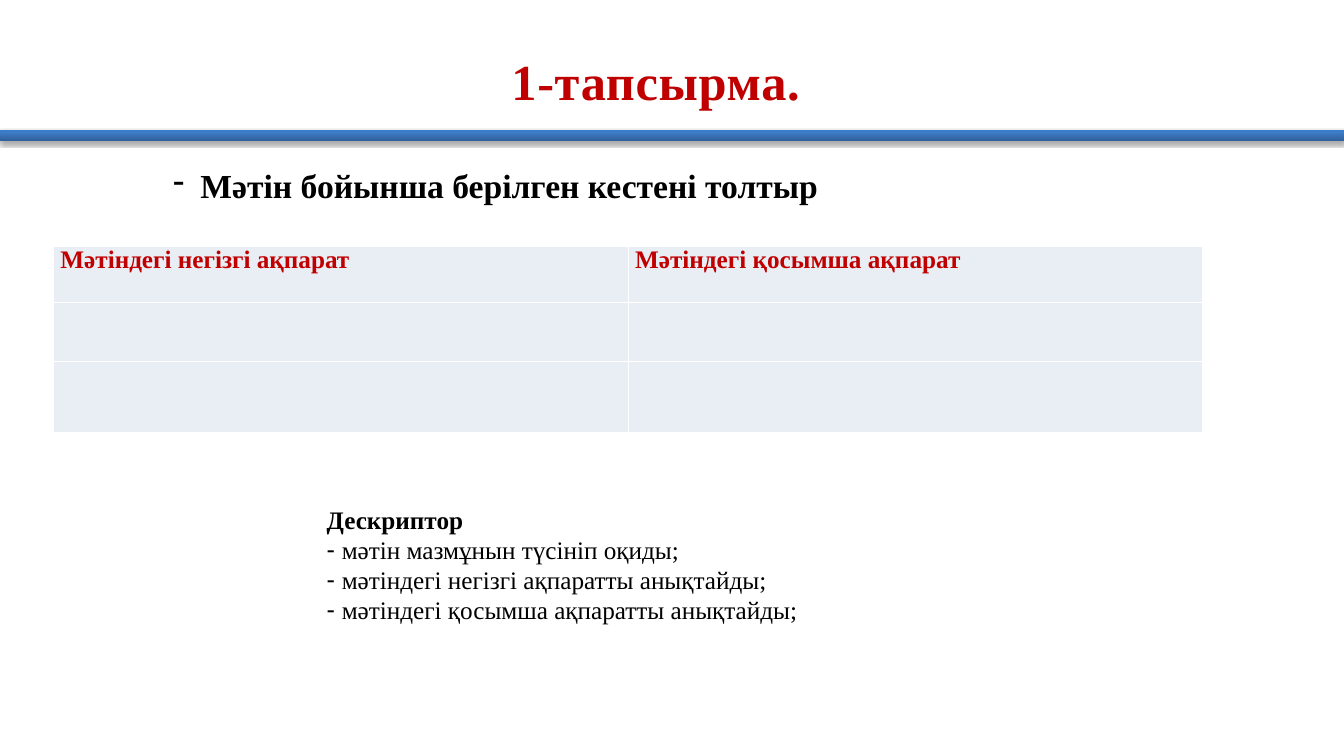
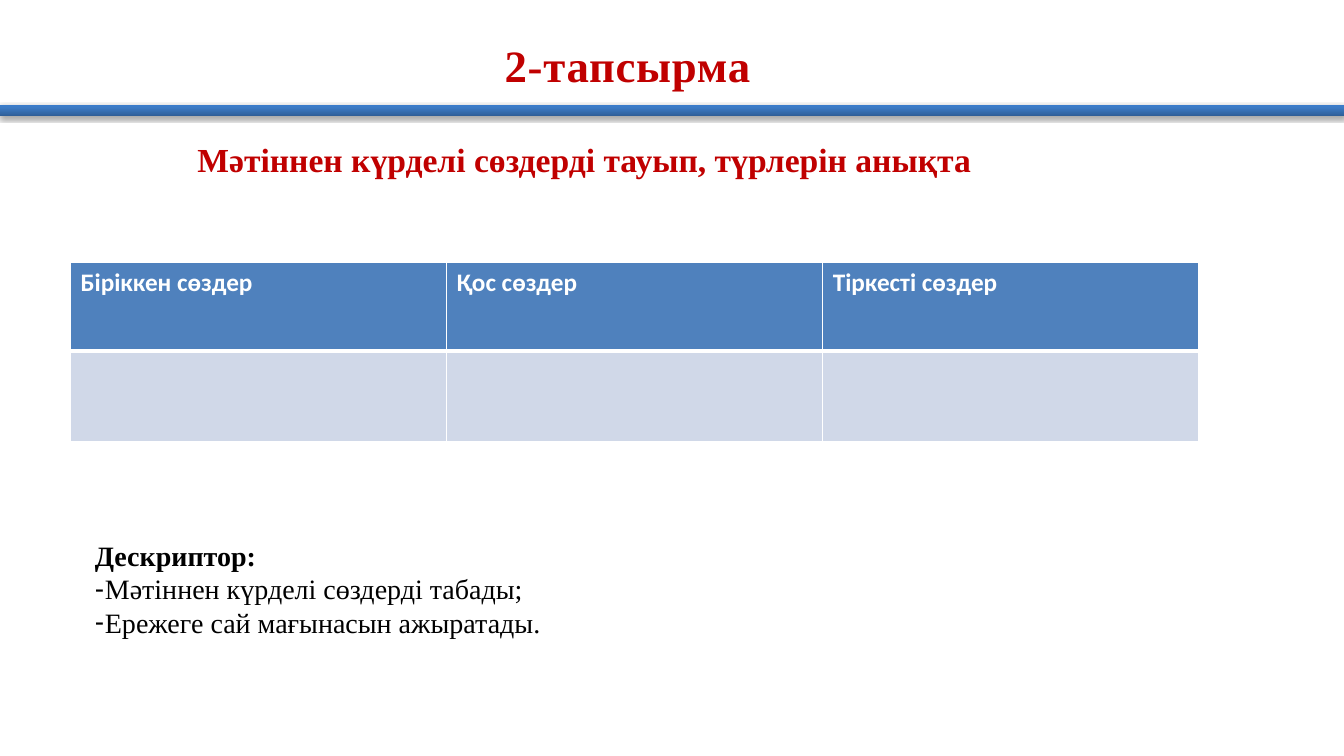
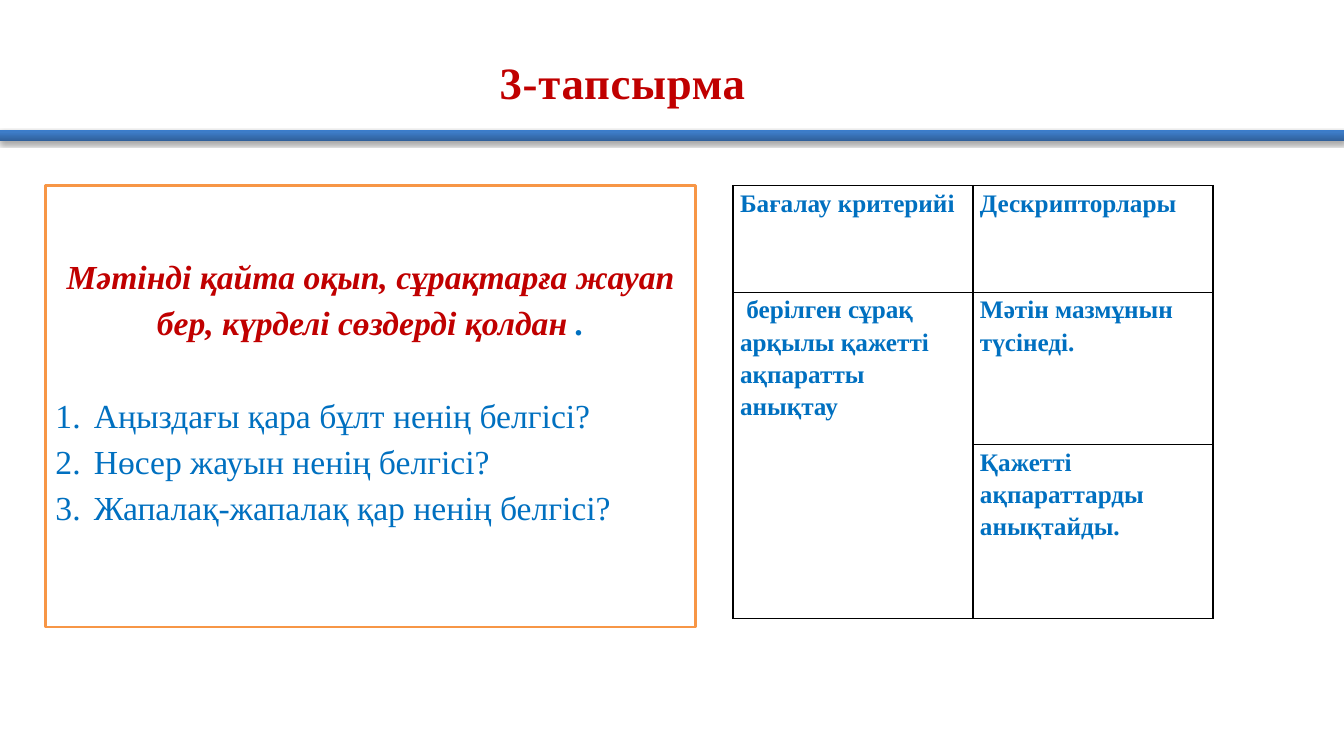
"""Build three lesson task slides with a shared title and band style."""
from lxml import etree
from pptx import Presentation
from pptx.dml.color import RGBColor
from pptx.enum.shapes import MSO_SHAPE as Shape
from pptx.enum.text import MSO_ANCHOR as Anchor, MSO_AUTO_SIZE as AutoSize, PP_ALIGN as Align
from pptx.oxml import parse_xml
from pptx.oxml.ns import nsdecls, qn
from pptx.util import Emu, Pt

PX = 9144
SLIDE_W, SLIDE_H = 1333, 750
SERIF, SANS = "Times New Roman", "Calibri"
RED, BLUE, BLACK, WHITE, ORANGE = "C00000", "0070C0", "000000", "FFFFFF", "F79646"
BAND_STOPS = [(0, "2F5F99"), (80, "3D7CC7"), (100, "3A7CCB")]
BAND_H = 11

TASKS = [
    {
        "title": ("1-тапсырма.", (484, 44, 333, 71), 36),
        "band_top": 129,
        "prompt": {
            "box": (162, 156, 797, 50), "size": 24, "spacing": 1.07,
            "lines": [{"runs": [("Мәтін бойынша берілген кестені толтыр", {"bold": True})],
                       "mark": "-", "indent": 27}],
        },
        "body": {
            "box": (314, 495, 667, 162), "size": 18,
            "lines": [
                {"runs": [("Дескриптор", {"bold": True})]},
                {"runs": [("мәтін мазмұнын түсініп оқиды;", {})], "mark": "-", "indent": 15},
                {"runs": [("мәтіндегі негізгі ақпаратты анықтайды;", {})], "mark": "-", "indent": 15},
                {"runs": [("мәтіндегі қосымша ақпаратты анықтайды;", {})], "mark": "-", "indent": 15},
            ],
        },
        "table": {
            "at": (53, 244), "col_width": 570, "row_heights": [56, 59, 70],
            "rows": [["Мәтіндегі негізгі ақпарат", "Мәтіндегі қосымша ақпарат"], ["", ""], ["", ""]],
            "fills": ["E9EDF4"] * 3, "border": WHITE, "header_rule": 1,
            "insets": (7, 0), "font": SERIF, "color": RED, "spacing": 1,
        },
    },
    {
        "title": ("2-тапсырма", (483, 32, 279, 64), 32),
        "band_top": 104,
        "prompt": {
            "box": (186, 133, 850, 50), "size": 24, "color": RED,
            "lines": [{"runs": [("Мәтіннен күрделі сөздерді тауып, түрлерін анықта", {"bold": True})]}],
        },
        "body": {
            "box": (84, 529, 813, 111), "size": 20,
            "lines": [
                {"runs": [("Дескриптор:", {"bold": True})]},
                {"runs": [("Мәтіннен күрделі сөздерді табады;", {})], "mark": "-", "indent": 10},
                {"runs": [("Ережеге сай мағынасын ажыратады.", {})], "mark": "-", "indent": 10},
            ],
        },
        "table": {
            "at": (70, 260), "col_width": 373, "row_heights": [88, 90],
            "rows": [["Біріккен сөздер", "Қос сөздер", "Тіркесті сөздер"], ["", "", ""]],
            "fills": ["4F81BD", "D0D8E8"], "border": WHITE, "header_rule": 3,
            "insets": (10, 5), "font": SANS, "color": WHITE, "spacing": 1,
        },
    },
    {
        "title": ("3-тапсырма", (472, 49, 291, 64), 32),
        "band_top": 129,
        "body": {
            "box": (45, 184, 645, 438), "size": 24, "color": BLUE, "spacing": 1.15,
            "frame": ORANGE, "bottom_inset": 40,
            "lines": [
                {"runs": [("Мәтінді қайта оқып, сұрақтарға жауап бер, күрделі сөздерді қолдан ",
                           {"bold": True, "italic": True, "color": RED}),
                          (".", {"bold": True, "italic": True})], "align": Align.CENTER},
                {"runs": [("Аңыздағы қара бұлт ненің белгісі?", {})],
                 "mark": "1.", "indent": 38, "before": 33},
                {"runs": [("Нөсер жауын ненің белгісі?", {})], "mark": "1.", "indent": 38},
                {"runs": [("Жапалақ-жапалақ қар ненің белгісі?", {})], "mark": "1.", "indent": 38},
            ],
        },
        "table": {
            "at": (727, 184), "col_width": 238, "row_heights": [106, 151, 173],
            "rows": [["Бағалау критерийі", "Дескрипторлары"],
                     [" берілген сұрақ арқылы қажетті ақпаратты анықтау", "Мәтін мазмұнын түсінеді."],
                     ["", "Қажетті ақпараттарды анықтайды."]],
            "fills": [None] * 3, "border": BLACK, "header_rule": 1, "merge": ((1, 0), (2, 0)),
            "insets": (7, 0), "font": SERIF, "color": BLUE, "spacing": 1.15,
        },
    },
]


def px(*lengths):
    return [Emu(length * PX) for length in lengths]


def rgb(value):
    return RGBColor.from_string(value)


def place(shape, box):
    shape.left, shape.top, shape.width, shape.height = px(*box)


def add_run(paragraph, text, size, color, font=SERIF, bold=False, italic=False):
    run = paragraph.add_run()
    run.text = text
    run.font.name, run.font.size = font, Pt(size)
    run.font.bold, run.font.italic = bold, italic
    run.font.color.rgb = rgb(color)
    return run


def set_mark(paragraph, mark, indent):
    props = paragraph._p.get_or_add_pPr()
    props.set("marL", str(indent * PX))
    props.set("indent", str(-indent * PX))
    if mark == "1.":
        etree.SubElement(props, qn("a:buAutoNum"), type="arabicPeriod")
    elif mark:
        etree.SubElement(props, qn("a:buChar"), char=mark)
    else:
        etree.SubElement(props, qn("a:buNone"))


def write_lines(shape, part):
    frame = shape.text_frame
    frame.word_wrap, frame.auto_size = True, AutoSize.NONE
    for index, line in enumerate(part["lines"]):
        paragraph = frame.add_paragraph() if index else frame.paragraphs[0]
        set_mark(paragraph, line.get("mark"), line.get("indent", 0))
        paragraph.alignment = line.get("align", Align.LEFT)
        paragraph.line_spacing = part.get("spacing", 1.0)
        paragraph.space_before = Pt(line.get("before", 0))
        for text, style in line["runs"]:
            add_run(paragraph, text, part["size"], **{"color": part.get("color", BLACK), **style})


def add_title(slide, text, box, size):
    title = slide.shapes.title
    place(title, box)
    title.text_frame.auto_size = AutoSize.NONE
    paragraph = title.text_frame.paragraphs[0]
    paragraph.alignment = Align.CENTER
    run = add_run(paragraph, text, size, RED, bold=True)
    run._r.get_or_add_rPr().set("spc", "50")


def add_band(slide, top):
    band = slide.shapes.add_shape(Shape.RECTANGLE, *px(0, top, SLIDE_W, BAND_H))
    stops = "".join(f'<a:gs pos="{pos * 1000}"><a:srgbClr val="{color}"/></a:gs>'
                    for pos, color in BAND_STOPS)
    ns = nsdecls("a")
    for fragment in (
        f'<a:gradFill {ns} rotWithShape="1"><a:gsLst>{stops}</a:gsLst>'
        '<a:lin ang="16200000" scaled="0"/></a:gradFill>',
        f'<a:ln {ns}><a:noFill/></a:ln>',
        f'<a:effectLst {ns}><a:outerShdw blurRad="40000" dist="23000" dir="5400000" rotWithShape="0">'
        '<a:srgbClr val="000000"><a:alpha val="35000"/></a:srgbClr></a:outerShdw></a:effectLst>',
    ):
        band._element.spPr.append(parse_xml(fragment))


def add_body(slide, part):
    body = slide.placeholders[1]
    place(body, part["box"])
    body.text_frame.vertical_anchor = Anchor.TOP
    if "frame" in part:
        body.fill.solid()
        body.fill.fore_color.rgb = rgb(WHITE)
        body.line.color.rgb = rgb(part["frame"])
        body.line.width = Pt(2)
        body.text_frame.vertical_anchor = Anchor.MIDDLE
        body.text_frame.margin_bottom = Emu(part["bottom_inset"] * PX)
    write_lines(body, part)


def set_borders(cell, color, top, bottom):
    props = cell._tc.get_or_add_tcPr()
    for index, (side, width) in enumerate([("L", 1), ("R", 1), ("T", top), ("B", bottom)]):
        props.insert(index, parse_xml(
            f'<a:ln{side} {nsdecls("a")} w="{Pt(width)}"><a:solidFill>'
            f'<a:srgbClr val="{color}"/></a:solidFill></a:ln{side}>'))


def add_grid(slide, part):
    rows, heights = part["rows"], part["row_heights"]
    columns = len(rows[0])
    box = (*part["at"], part["col_width"] * columns, sum(heights))
    table = slide.shapes.add_table(len(rows), columns, *px(*box)).table
    table.first_row = table.horz_banding = False
    for column in table.columns:
        column.width = Emu(part["col_width"] * PX)
    side, edge = px(*part["insets"])
    for r, texts in enumerate(rows):
        table.rows[r].height = Emu(heights[r] * PX)
        for c, text in enumerate(texts):
            cell = table.cell(r, c)
            cell.margin_left = cell.margin_right = side
            cell.margin_top = cell.margin_bottom = edge
            if part["fills"][r]:
                cell.fill.solid()
                cell.fill.fore_color.rgb = rgb(part["fills"][r])
            else:
                cell.fill.background()
            set_borders(cell, part["border"], part["header_rule"] if r == 1 else 1,
                        part["header_rule"] if r == 0 else 1)
            if text:
                paragraph = cell.text_frame.paragraphs[0]
                paragraph.line_spacing = float(part["spacing"])
                add_run(paragraph, text, 18, part["color"], part["font"], bold=True)
    if "merge" in part:
        first, last = part["merge"]
        table.cell(*first).merge(table.cell(*last))


def main():
    deck = Presentation()
    deck.slide_width, deck.slide_height = px(SLIDE_W, SLIDE_H)
    for task in TASKS:
        slide = deck.slides.add_slide(deck.slide_layouts[1])
        add_band(slide, task["band_top"])
        add_title(slide, *task["title"])
        if "prompt" in task:
            write_lines(slide.shapes.add_textbox(*px(*task["prompt"]["box"])), task["prompt"])
        add_body(slide, task["body"])
        add_grid(slide, task["table"])
    deck.save("out.pptx")


if __name__ == "__main__":
    main()
